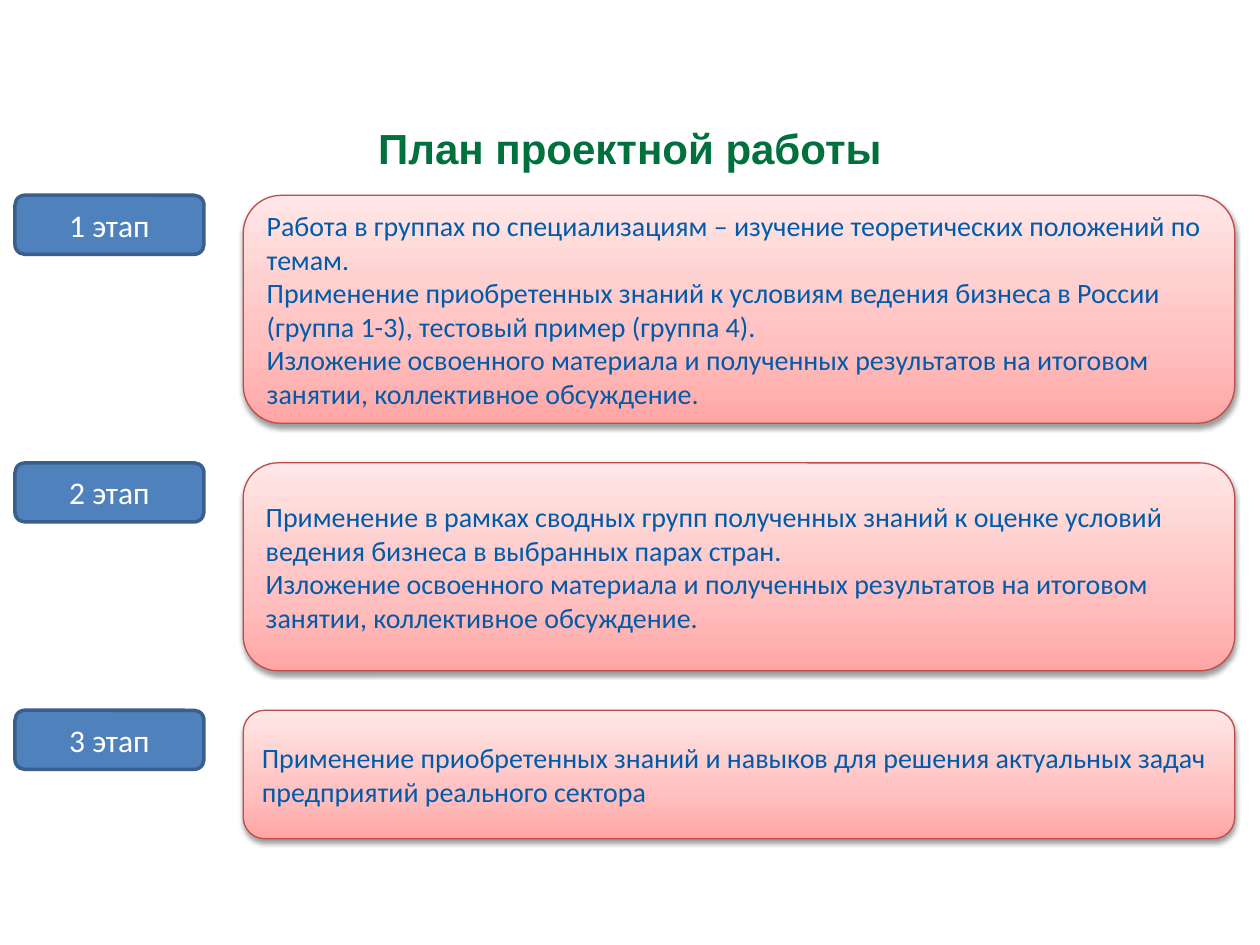
"""Build the slide with the three stages of the project work plan."""
from copy import deepcopy

from lxml import etree
from pptx import Presentation
from pptx.dml.color import RGBColor
from pptx.enum.shapes import MSO_SHAPE
from pptx.enum.text import MSO_ANCHOR, PP_ALIGN
from pptx.oxml.ns import qn
from pptx.util import Pt

ROUND = MSO_SHAPE.ROUNDED_RECTANGLE
MIDDLE = MSO_ANCHOR.MIDDLE
LEFT, CENTER = PP_ALIGN.LEFT, PP_ALIGN.CENTER

GREEN = RGBColor(0x00, 0x70, 0x3C)
WHITE = RGBColor(0xFF, 0xFF, 0xFF)
NAVY = RGBColor(0x00, 0x5B, 0xAA)
BLUE = RGBColor(0x4F, 0x81, 0xBD)
STEEL = RGBColor(0x3A, 0x5F, 0x8C)
RED = RGBColor(0xBF, 0x4C, 0x48)
SHADES = [
    (0, RGBColor(0xFF, 0xA6, 0xA5)),
    (0.35, RGBColor(0xFF, 0xC0, 0xBF)),
    (1, RGBColor(0xFF, 0xE7, 0xE7)),
]

TITLE = "План проектной работы"
REPORT = ("Изложение освоенного материала и полученных результатов "
          "на итоговом занятии, коллективное обсуждение.")
STAGES = [
    ("1 этап", 130.3, [
        "Работа в группах по специализациям – изучение теоретических "
        "положений по темам.",
        "Применение приобретенных знаний к условиям ведения бизнеса в России "
        "(группа 1-3), тестовый пример (группа 4).",
        REPORT,
    ]),
    ("2 этап", 118.8, [
        "Применение в рамках сводных групп полученных знаний к оценке условий "
        "ведения бизнеса в выбранных парах стран.",
        REPORT,
    ]),
    ("3 этап", 73.4, [
        "Применение приобретенных знаний и навыков для решения актуальных "
        "задач предприятий реального сектора",
    ]),
]

HEAD = {"name": "Arial", "size": Pt(24), "bold": True}
LABEL = {"name": "Calibri", "size": Pt(18)}
BODY = {"name": "Calibri", "size": Pt(16)}

TOP, GAP = 111.6, 22.6
TAG_X, TAG_W, TAG_H = 8.6, 108, 33.8
CARD_X, CARD_W = 139, 566.6


def write(shape, lines, style, color, align):
    frame = shape.text_frame
    frame.word_wrap = True
    frame.text = "\n".join(lines)
    for para in frame.paragraphs:
        para.alignment = align
        para.font.color.rgb = color
        for key, value in style.items():
            setattr(para.font, key, value)


def add_box(slide, area, edge, width):
    box = slide.shapes.add_shape(ROUND, *map(Pt, area))
    box.shadow.inherit = False
    box.line.color.rgb = edge
    box.line.width = Pt(width)
    box.text_frame.vertical_anchor = MIDDLE
    return box


def shade(box):
    box.fill.gradient()
    stops = box._element.spPr.find(".//" + qn("a:gsLst"))
    stops.append(deepcopy(stops[-1]))
    for stop, (place, color) in zip(box.fill.gradient_stops, SHADES):
        stop.position = place
        stop.color.rgb = color
    box.fill.gradient_angle = 90


def drop(box):
    effects = box._element.spPr.find(qn("a:effectLst"))
    outer = etree.SubElement(
        effects, qn("a:outerShdw"), blurRad=str(Pt(3.1)), dist=str(Pt(1.6)),
        dir="5400000", rotWithShape="0")
    black = etree.SubElement(outer, qn("a:srgbClr"), val="000000")
    etree.SubElement(black, qn("a:alpha"), val="38000")


def main():
    deck = Presentation()
    deck.slide_width, deck.slide_height = Pt(720), Pt(540)
    slide = deck.slides.add_slide(deck.slide_layouts[6])

    title = slide.shapes.add_textbox(Pt(0), Pt(66.5), Pt(720), Pt(36))
    write(title, [TITLE], HEAD, GREEN, CENTER)

    top = TOP
    for name, height, lines in STAGES:
        tag = add_box(slide, (TAG_X, top, TAG_W, TAG_H), STEEL, 2)
        tag.fill.solid()
        tag.fill.fore_color.rgb = BLUE
        write(tag, [name], LABEL, WHITE, CENTER)

        card = add_box(slide, (CARD_X, top, CARD_W, height), RED, 0.75)
        shade(card)
        drop(card)
        write(card, lines, BODY, NAVY, LEFT)
        top += height + GAP

    deck.save("out.pptx")


if __name__ == "__main__":
    main()
